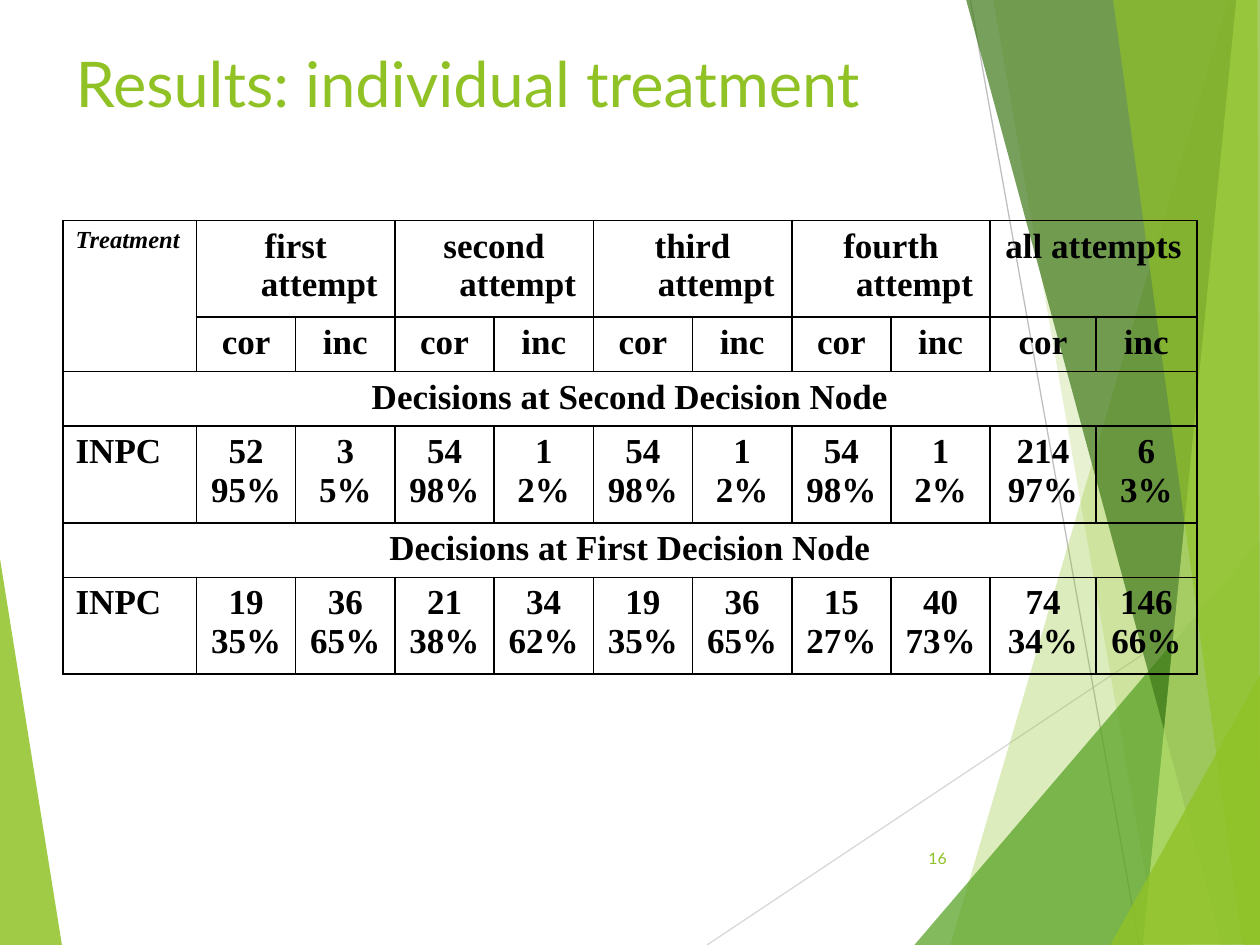
from lxml import etree
from pptx import Presentation
from pptx.dml.color import RGBColor
from pptx.enum.shapes import MSO_CONNECTOR
from pptx.enum.text import MSO_ANCHOR, MSO_AUTO_SIZE, PP_ALIGN
from pptx.oxml.ns import qn
from pptx.util import Pt

STRAIGHT = MSO_CONNECTOR.STRAIGHT
TOP, MIDDLE = MSO_ANCHOR.TOP, MSO_ANCHOR.MIDDLE
NO_FIT = MSO_AUTO_SIZE.NONE
LEFT, CENTER, RIGHT, JUSTIFY = PP_ALIGN.LEFT, PP_ALIGN.CENTER, PP_ALIGN.RIGHT, PP_ALIGN.JUSTIFY

LIME = RGBColor(0x90, 0xC2, 0x26)
GREEN = RGBColor(0x54, 0xA0, 0x21)
DARK_GREEN = RGBColor(0x3F, 0x78, 0x19)
PALE_LIME = RGBColor(0xC0, 0xE4, 0x74)
LIGHT_GRAY = RGBColor(0xD9, 0xD9, 0xD9)
GRAY = RGBColor(0xBF, 0xBF, 0xBF)
BLACK = RGBColor(0, 0, 0)

HEADING_FONT = "Lato"
TABLE_FONT = "Times New Roman"


def add_span(para, text, font, size, color):
    span = para.add_run()
    span.text = text
    span.font.name = font
    span.font.size = Pt(size)
    span.font.color.rgb = color
    return span


def fill_cell(cell, text, align=CENTER, size=20, italic=False):
    frame = cell.text_frame
    for index, line in enumerate(text.split("\n")):
        para = frame.add_paragraph() if index else frame.paragraphs[0]
        para.alignment = align
        properties = para._p.get_or_add_pPr()
        properties.set("marL", str(Pt(27)))
        properties.set("indent", str(Pt(-27)))
        span = add_span(para, line, TABLE_FONT, size, BLACK)
        span.font.bold = True
        span.font.italic = italic


deck = Presentation()
deck.slide_width, deck.slide_height = Pt(720), Pt(540)
page = deck.slides.add_slide(deck.slide_layouts[5])
shapes = page.shapes

# Thin background lines
for x1, y1, x2, y2, color in [
    (404, 540, 720.5, 329, LIGHT_GRAY),
    (554.5, 0, 651, 540, GRAY),
]:
    line = shapes.add_connector(STRAIGHT, Pt(x1), Pt(y1), Pt(x2), Pt(y2))
    line.line.color.rgb = color
    line.line.width = Pt(0.75)
    etree.SubElement(line._element.spPr, qn("a:effectLst"))

# Translucent facets: colour, opacity in percent, corners
facets = [
    (LIME, 85, [(-0.5, 316), (35.5, 540.5), (-0.5, 540)]),
    (LIME, 30, [(702, 0), (543, 540), (721, 540.5), (720.5, 0.5)]),
    (LIME, 20, [(567.5, -0.5), (661.5, 540), (720.5, 540), (720.5, -0.5)]),
    (GREEN, 72, [(522.5, 540), (720, 309), (720.5, 540)]),
    (DARK_GREEN, 70, [(552, -0.5), (698.5, 540), (720.5, 539.5), (720.5, -0.5)]),
    (PALE_LIME, 70, [(706.5, -0.5), (653, 540), (720.5, 540), (720, -0.5)]),
    (LIME, 65, [(636, -0.5), (710, 540), (720, 540), (718.5, -0.5)]),
    (LIME, 80, [(634.5, 540), (720.5, 385), (720.5, 539.5)]),
]
for color, opacity, corners in facets:
    points = [(Pt(x), Pt(y)) for x, y in corners]
    builder = shapes.build_freeform(*points[0], scale=1.0)
    builder.add_line_segments(points[1:], close=True)
    facet = builder.convert_to_shape()
    facet.shadow.inherit = False
    facet.line.fill.background()
    facet.fill.solid()
    facet.fill.fore_color.rgb = color
    tint = facet._element.spPr.find(".//" + qn("a:srgbClr"))
    etree.SubElement(tint, qn("a:alpha"), val=str(opacity * 1000))

# Title, brought in front of the facets
title = shapes.title
title.left, title.top, title.width, title.height = Pt(36), Pt(21.6), Pt(648), Pt(90)
title.element.getparent().append(title.element)
frame = title.text_frame
frame.auto_size = NO_FIT
frame.vertical_anchor = TOP
frame.paragraphs[0].alignment = LEFT
add_span(frame.paragraphs[0], "Results: individual treatment", HEADING_FONT, 36, LIME)

# Results table
column_widths = [76.3] + [56.7] * 8 + [60.4, 57.7]
row_heights = [55.2, 31.2, 31.2, 55.2, 31.2, 55.2]
table = shapes.add_table(len(row_heights), len(column_widths),
                         Pt(36), Pt(126), Pt(648), Pt(259.2)).table
table.first_row = table.horz_banding = False
for column, width in zip(table.columns, column_widths):
    column.width = Pt(width)
for row, height in zip(table.rows, row_heights):
    row.height = Pt(height)

# Cell borders, without fill
for cell in table.iter_cells():
    properties = cell._tc.get_or_add_tcPr()
    for side in ("a:lnL", "a:lnR", "a:lnT", "a:lnB"):
        border = etree.SubElement(properties, qn(side), w=str(Pt(1)))
        solid = etree.SubElement(border, qn("a:solidFill"))
        etree.SubElement(solid, qn("a:srgbClr"), val=str(BLACK))
    cell.fill.background()

# Header rows
table.cell(0, 0).merge(table.cell(1, 0))
fill_cell(table.cell(0, 0), "Treatment", JUSTIFY, 14, True)
attempts = ["first attempt", "second attempt", "third attempt", "fourth attempt", "all attempts"]
for index, attempt in enumerate(attempts):
    column = 1 + 2 * index
    table.cell(0, column).merge(table.cell(0, column + 1))
    fill_cell(table.cell(0, column), attempt)
    fill_cell(table.cell(1, column), "cor")
    fill_cell(table.cell(1, column + 1), "inc")

# One heading row and one data row per decision node
sections = [
    ("Decisions at Second Decision Node",
     [52, 3, 54, 1, 54, 1, 54, 1, 214, 6],
     [95, 5, 98, 2, 98, 2, 98, 2, 97, 3]),
    ("Decisions at First Decision Node",
     [19, 36, 21, 34, 19, 36, 15, 40, 74, 146],
     [35, 65, 38, 62, 35, 65, 27, 73, 34, 66]),
]
for index, (heading, counts, shares) in enumerate(sections):
    row = 2 + 2 * index
    table.cell(row, 0).merge(table.cell(row, len(column_widths) - 1))
    fill_cell(table.cell(row, 0), heading)
    fill_cell(table.cell(row + 1, 0), "INPC", JUSTIFY)
    for column, (count, share) in enumerate(zip(counts, shares), start=1):
        fill_cell(table.cell(row + 1, column), f"{count}\n{share}%")

# Page number
box = shapes.add_textbox(Pt(507.6), Pt(476), Pt(40.4), Pt(28.8))
frame = box.text_frame
frame.word_wrap = True
frame.vertical_anchor = MIDDLE
frame.paragraphs[0].alignment = RIGHT
add_span(frame.paragraphs[0], "16", HEADING_FONT, 9, LIME)

deck.save("out.pptx")
